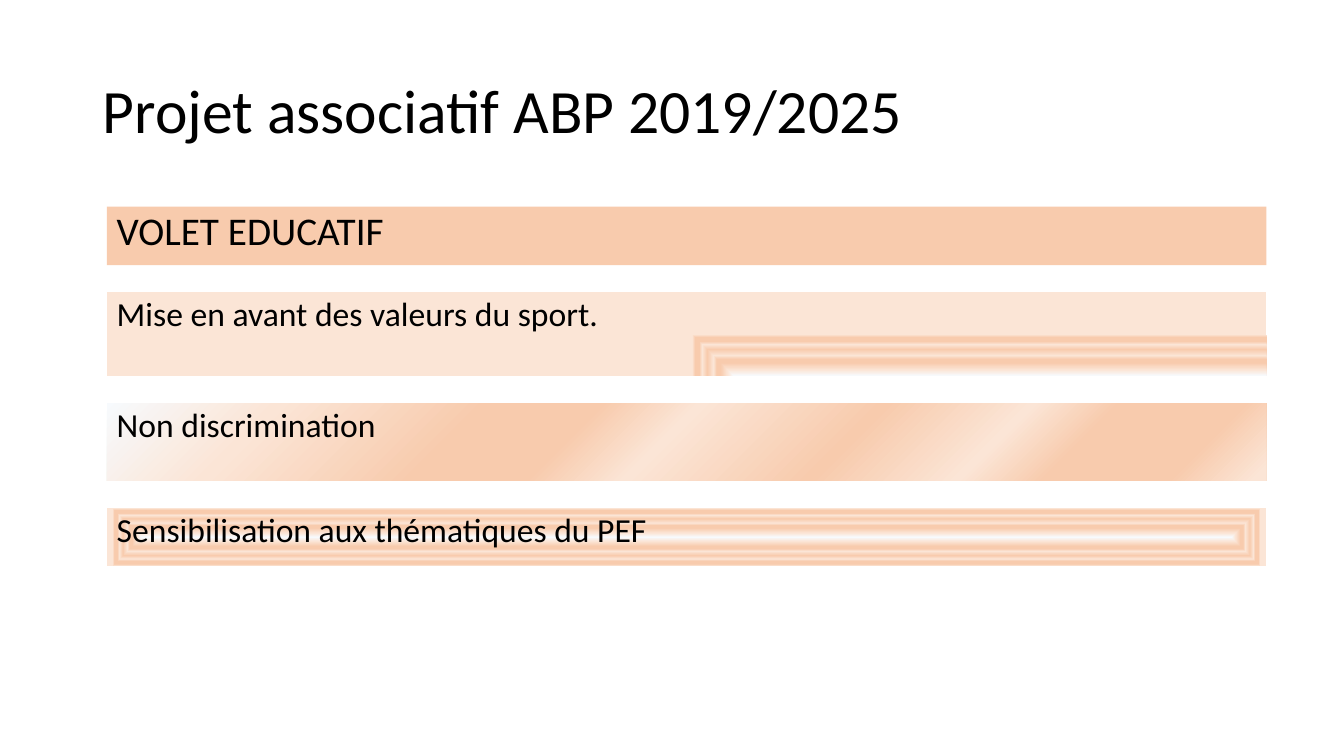
from lxml.etree import SubElement
from pptx import Presentation
from pptx.dml.color import RGBColor
from pptx.enum.shapes import MSO_SHAPE
from pptx.enum.text import MSO_ANCHOR, MSO_AUTO_SIZE, PP_ALIGN
from pptx.oxml.ns import qn
from pptx.util import Inches, Pt

COLORS = {"text": "000000", "pale": "F7FAFD", "light": "FBE5D6", "peach": "F8CBAD"}
STOPS = [(0, "pale"), (14, "light"), (31, "peach"), (40, "peach"), (48, "light"),
         (63, "peach"), (75, "light"), (82, "peach"), (92, "peach"), (99, "light")]
LEFT, WIDTH = 1.06, 11.5
FIRST_TOP, GAP = 2.05, 0.27


class SlideBuilder:
    def __init__(self, page, font="Calibri"):
        self.page = page
        self.font = font

    def set_text(self, frame, text, size, anchor, space_before=0):
        frame.word_wrap = True
        frame.auto_size = MSO_AUTO_SIZE.NONE
        frame.vertical_anchor = anchor
        paragraph = frame.paragraphs[0]
        paragraph.text = text
        paragraph.alignment = PP_ALIGN.LEFT
        paragraph.line_spacing = 0.9
        paragraph.space_before = Pt(space_before)
        paragraph.font.name = self.font
        paragraph.font.size = Pt(size)
        paragraph.font.color.rgb = RGBColor.from_string(COLORS["text"])

    def title(self, text, left, top, width, height):
        title = self.page.shapes.title
        title.left, title.top = Inches(left), Inches(top)
        title.width, title.height = Inches(width), Inches(height)
        self.set_text(title.text_frame, text, 44, MSO_ANCHOR.MIDDLE)

    def band(self, text, top, height, size, gradient=None):
        band = self.page.shapes.add_shape(
            MSO_SHAPE.RECTANGLE, Inches(LEFT), Inches(top), Inches(WIDTH), Inches(height))
        band.shadow.inherit = False
        band.line.fill.background()
        if gradient:
            self.gradient(band, **gradient)
        else:
            band.fill.solid()
            band.fill.fore_color.rgb = RGBColor.from_string(COLORS["peach"])
        self.set_text(band.text_frame, text, size, MSO_ANCHOR.TOP, space_before=10)

    def gradient(self, shape, kind, focus=None, angle=0):
        properties = shape.element.spPr
        fill = SubElement(properties, qn("a:gradFill"), rotWithShape="1")
        properties.find(qn("a:prstGeom")).addnext(fill)
        stops = SubElement(fill, qn("a:gsLst"))
        for position, color in STOPS:
            stop = SubElement(stops, qn("a:gs"), pos=str(position * 1000))
            SubElement(stop, qn("a:srgbClr"), val=COLORS[color])
        if kind == "linear":
            SubElement(fill, qn("a:lin"), ang=str(angle * 60000), scaled="1")
        else:
            shade = SubElement(fill, qn("a:path"), path=kind)
            sides = {side: str(share * 1000) for side, share in zip("ltrb", focus)}
            SubElement(shade, qn("a:fillToRect"), **sides)


def main():
    deck = Presentation()
    deck.slide_width, deck.slide_height = Inches(13.33), Inches(7.5)
    builder = SlideBuilder(deck.slides.add_slide(deck.slide_layouts[5]))
    builder.title("Projet associatif ABP 2019/2025", 0.92, 0.4, 11.5, 1.45)

    bands = [
        ("VOLET EDUCATIF", 0.58, 28, None),
        ("Mise en avant des valeurs du sport.", 0.83, 24,
         {"kind": "rect", "focus": (100, 100, 0, 0)}),
        ("Non discrimination", 0.77, 24, {"kind": "linear", "angle": 45}),
        ("Sensibilisation aux thématiques du PEF", 0.58, 24,
         {"kind": "shape", "focus": (50, 50, 50, 50)}),
    ]
    top = FIRST_TOP
    for text, height, size, gradient in bands:
        builder.band(text, top, height, size, gradient)
        top += height + GAP
    deck.save("out.pptx")


if __name__ == "__main__":
    main()
